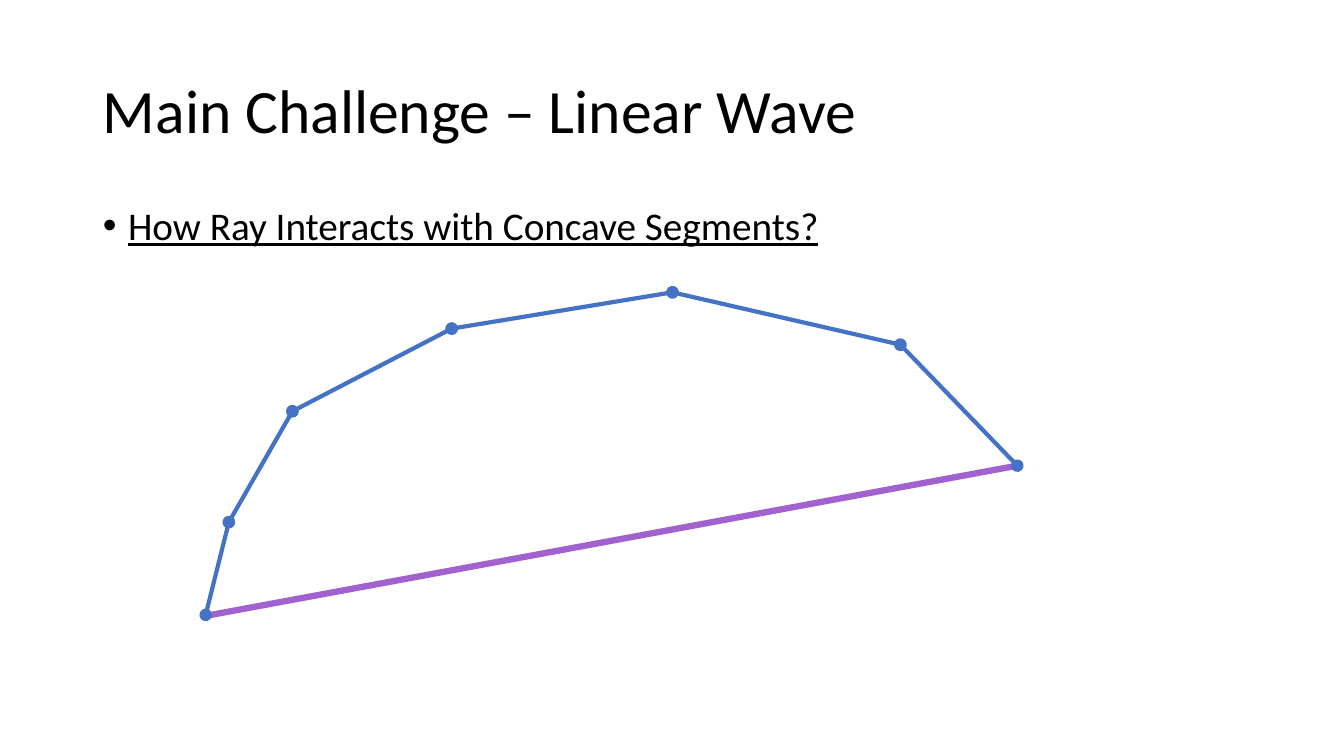
from itertools import pairwise

from lxml.etree import SubElement
from pptx import Presentation
from pptx.dml.color import RGBColor
from pptx.enum.shapes import MSO_CONNECTOR as Conn
from pptx.enum.text import MSO_ANCHOR as Anchor, MSO_AUTO_SIZE as Fit, PP_ALIGN as Align
from pptx.oxml.ns import qn
from pptx.util import Inches, Pt

BLACK = RGBColor(0x00, 0x00, 0x00)
BLUE = RGBColor(0x44, 0x72, 0xC4)
PURPLE = RGBColor(0xA1, 0x62, 0xD0)
FONT = "Calibri"

# Corners of the concave chain, from left to right
CHAIN = [(2.04, 6.1), (2.27, 5.18), (2.9, 4.08), (4.48, 3.26),
         (6.67, 2.9), (8.93, 3.42), (10.09, 4.62)]


def fill_text(holder, box, text, size, anchor, under=None):
    """Place a placeholder and write one paragraph in it."""
    holder.left, holder.top, holder.width, holder.height = map(Inches, box)
    frame = holder.text_frame
    frame.word_wrap = True
    frame.auto_size = Fit.NONE
    frame.vertical_anchor = anchor
    para = frame.paragraphs[0]
    para.alignment = Align.LEFT
    para.line_spacing = 0.9
    run = para.add_run()
    run.text = text
    font = run.font
    font.name, font.size, font.underline = FONT, Pt(size), under
    font.color.rgb = BLACK
    return para


def add_bullet(para):
    """Give a paragraph a hanging round bullet."""
    para.space_before = Pt(10)
    props = para._p.get_or_add_pPr()
    props.set("marL", str(Inches(0.25)))
    props.set("indent", str(-Inches(0.25)))
    SubElement(props, qn("a:buFont")).set("typeface", "Arial")
    SubElement(props, qn("a:buChar")).set("char", "•")


def add_line(slide, start, end, color, width, dots=False):
    """Draw a straight line, with round dots at both ends if asked."""
    line = slide.shapes.add_connector(Conn.STRAIGHT, *map(Inches, start + end))
    line.line.color.rgb = color
    line.line.width = Pt(width)
    props = line._element.spPr
    if dots:
        for tag in ("a:headEnd", "a:tailEnd"):
            SubElement(props.find(qn("a:ln")), qn(tag)).set("type", "oval")
    SubElement(props, qn("a:effectLst"))


def main():
    deck = Presentation()
    deck.slide_width, deck.slide_height = Inches(13.33), Inches(7.5)
    slide = deck.slides.add_slide(deck.slide_layouts[1])

    # Title and question
    fill_text(slide.shapes.title, (0.92, 0.4, 11.5, 1.45),
              "Main Challenge – Linear Wave", 44, Anchor.MIDDLE)
    ask = fill_text(slide.placeholders[1], (0.92, 2, 11.5, 4.76),
                    "How Ray Interacts with Concave Segments?", 28,
                    Anchor.TOP, under=True)
    add_bullet(ask)

    # Linear wave, then the chain over it
    add_line(slide, (2.04, 6.11), CHAIN[-1], PURPLE, 4.5)
    for left, right in pairwise(CHAIN):
        add_line(slide, right, left, BLUE, 3, dots=True)

    deck.save("out.pptx")


if __name__ == "__main__":
    main()
